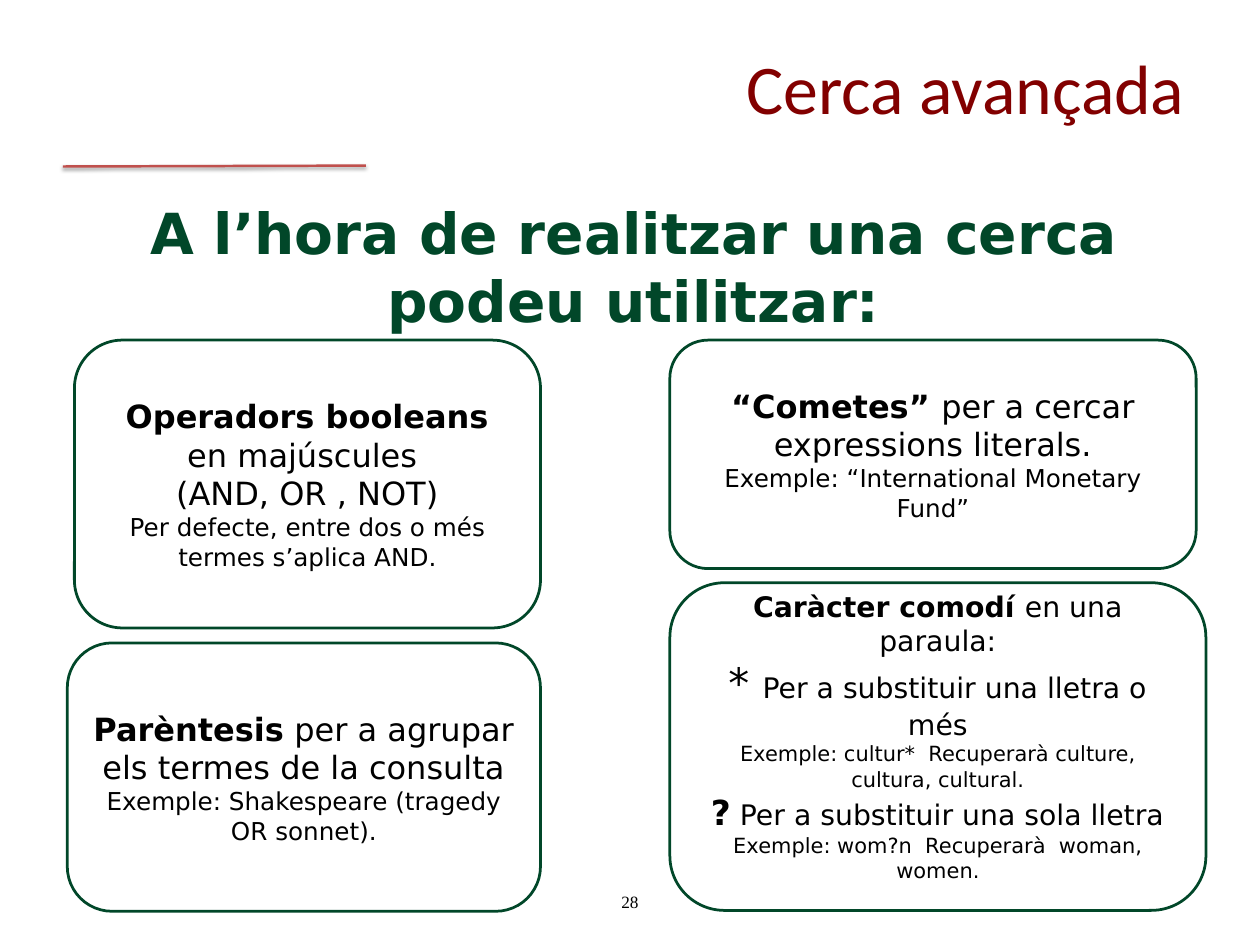
from lxml import etree
from pptx import Presentation
from pptx.dml.color import RGBColor
from pptx.enum.shapes import MSO_CONNECTOR as CONNECTOR, MSO_SHAPE as SHAPE
from pptx.enum.text import MSO_ANCHOR as ANCHOR, MSO_AUTO_SIZE as AUTO_SIZE, PP_ALIGN as ALIGN
from pptx.oxml.ns import qn
from pptx.util import Inches, Pt

GREEN = RGBColor(0x01, 0x47, 0x29)
MAROON = RGBColor(0x82, 0x00, 0x00)
RED = RGBColor(0xC0, 0x50, 0x4D)
BLACK = RGBColor(0x00, 0x00, 0x00)
SHADOW_COLOR = "000000"

BOOLEANS = [
    [("Operadors booleans ", 26, True), ("en majúscules ", 26, False)],
    [("(AND, OR , NOT)", 26, False)],
    [("Per defecte, entre dos o més termes s’aplica AND.", 20, False)],
]
PARENTHESES = [
    [("Parèntesis", 26, True), (" per a agrupar els termes de la consulta", 26, False)],
    [("Exemple: Shakespeare (tragedy OR sonnet).", 20, False)],
]
QUOTES = [
    [("“Cometes” ", 26, True), ("per a cercar expressions literals.", 26, False)],
    [("Exemple: “International Monetary Fund”", 20, False)],
]
WILDCARDS = [
    [("Caràcter comodí ", 23, True), ("en una paraula:", 23, False)],
    [("* ", 34, False), ("Per a substituir una lletra o més", 23, False)],
    [("Exemple: cultur*  Recuperarà culture, cultura, cultural.", 17, False)],
    [("?", 28, True), (" Per a substituir una sola lletra", 23, False)],
    [("Exemple: wom?n  Recuperarà  woman, women.", 17, False)],
]


def write_text(frame, paragraphs, font="DejaVu Sans", color=BLACK, align=ALIGN.CENTER,
               anchor=ANCHOR.MIDDLE, top=0.07, bottom=0.07):
    frame.word_wrap = True
    frame.auto_size = AUTO_SIZE.NONE
    frame.vertical_anchor = anchor
    frame.margin_left = frame.margin_right = Inches(0.14)
    frame.margin_top, frame.margin_bottom = Inches(top), Inches(bottom)
    for index, runs in enumerate(paragraphs):
        paragraph = frame.add_paragraph() if index else frame.paragraphs[0]
        paragraph.alignment = align
        for text, size, bold in runs:
            run = paragraph.add_run()
            run.text = text
            run.font.name = font
            run.font.size = Pt(size)
            run.font.bold = bold
            run.font.color.rgb = color


def add_title(slide, text):
    title = slide.shapes.title
    title.left, title.top = Inches(0.71), Inches(0.43)
    title.width, title.height = Inches(12.8), Inches(1.09)
    write_text(title.text_frame, [[(text, 56.7, False)]],
               font="Calibri", color=MAROON, align=ALIGN.RIGHT)


def add_title_rule(slide):
    rule = slide.shapes.add_connector(
        CONNECTOR.STRAIGHT, Inches(0.71), Inches(1.88), Inches(4.13), Inches(1.87))
    rule.line.color.rgb = RED
    rule.line.width = Pt(2)
    effects = etree.SubElement(rule._element.spPr, qn("a:effectLst"))
    shadow = etree.SubElement(effects, qn("a:outerShdw"), blurRad=str(Pt(3.1)),
                              dist=str(Pt(1.6)), dir="5400000", rotWithShape="0")
    tint = etree.SubElement(shadow, qn("a:srgbClr"), val=SHADOW_COLOR)
    etree.SubElement(tint, qn("a:alpha"), val="38000")


def add_label(slide, position, text, size, bold=False, **text_format):
    label = slide.shapes.add_textbox(*map(Inches, position))
    write_text(label.text_frame, [[(text, size, bold)]], **text_format)


def add_tip(slide, position, paragraphs, **text_format):
    tip = slide.shapes.add_shape(SHAPE.ROUNDED_RECTANGLE, *map(Inches, position))
    tip.shadow.inherit = False
    tip.fill.background()
    tip.line.color.rgb = GREEN
    tip.line.width = Pt(2.25)
    write_text(tip.text_frame, paragraphs, **text_format)


def main():
    deck = Presentation()
    deck.slide_width, deck.slide_height = Inches(14.22), Inches(10.67)
    slide = deck.slides.add_slide(deck.slide_layouts[5])

    add_title_rule(slide)
    add_title(slide, "Cerca avançada")
    add_label(slide, (4.86, 9.89, 4.5, 0.57), "28", 14, font="Times New Roman")
    add_label(slide, (0.71, 2.16, 12.88, 1.68),
              "A l’hora de realitzar una cerca podeu utilitzar:", 46, bold=True,
              color=GREEN, anchor=ANCHOR.TOP)
    add_tip(slide, (0.84, 3.84, 5.26, 3.25), BOOLEANS)
    add_tip(slide, (0.76, 7.26, 5.34, 3.03), PARENTHESES)
    add_tip(slide, (7.56, 3.84, 5.94, 2.58), QUOTES)
    add_tip(slide, (7.56, 6.58, 6.05, 3.7), WILDCARDS, top=0, bottom=0.24)

    deck.save("out.pptx")


if __name__ == "__main__":
    main()
